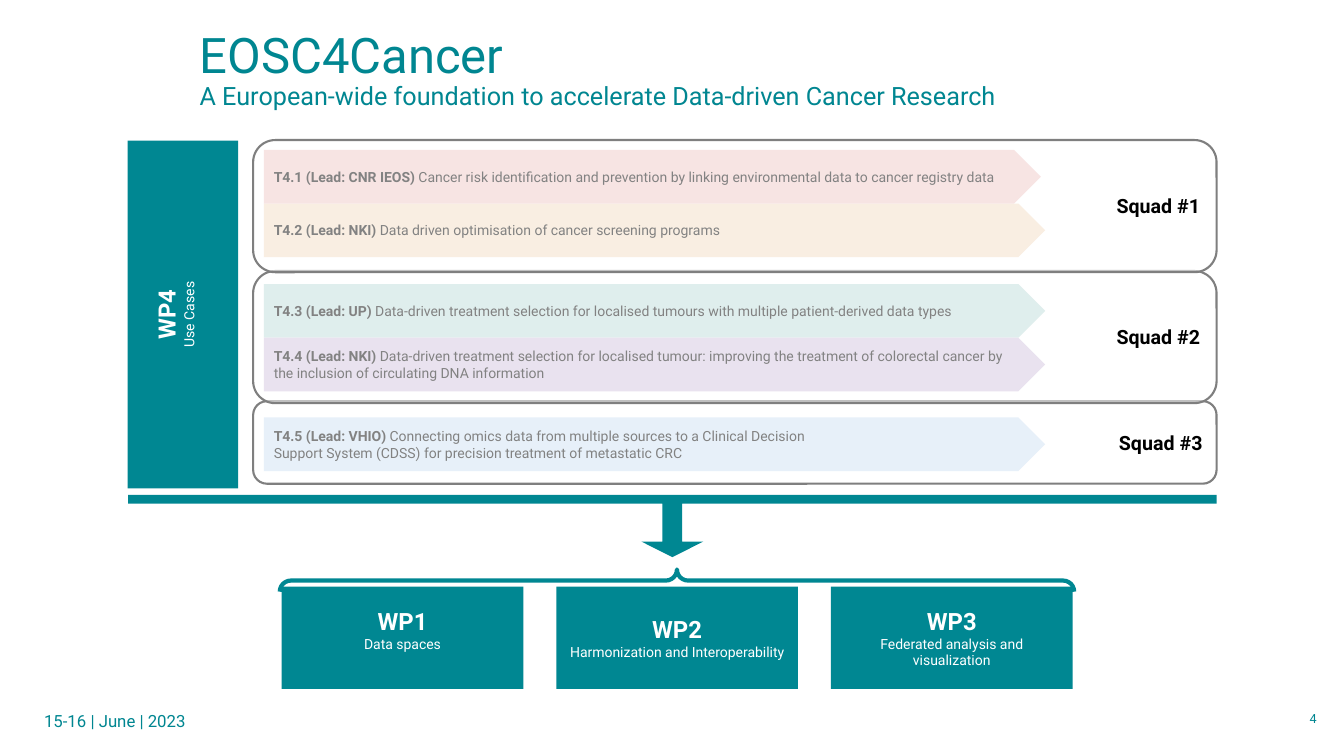
from lxml.etree import SubElement
from pptx import Presentation
from pptx.dml.color import RGBColor
from pptx.enum.shapes import MSO_SHAPE
from pptx.enum.text import MSO_ANCHOR, PP_ALIGN
from pptx.oxml.ns import qn
from pptx.util import Cm, Pt

FONT = "Roboto"
COLORS = {
    "heading": "008691", "teal": "008792", "white": "FFFFFF",
    "black": "000000", "border": "7F7F7F", "rose": "F0C8C6",
    "sand": "F3DDC4", "mint": "BFDDDB", "lilac": "D3C5DF", "sky": "CFE2F3",
}
TASK_HEIGHT = 1.35
TASKS = [
    (10.52, 19.69, "sky", "T4.5 (Lead: VHIO)",
     [" Connecting omics data from multiple sources to a Clinical Decision",
      "Support System (CDSS) for precision treatment of metastatic CRC"]),
    (7.16, 19.69, "mint", "T4.3 (Lead: UP)",
     [" Data-driven treatment selection for localised tumours with multiple "
      "patient-derived data types"]),
    (7.16 + TASK_HEIGHT, 19.69, "lilac", "T4.4 (Lead: NKI)",
     [" Data-driven treatment selection for localised tumour: improving the "
      "treatment of colorectal cancer by the inclusion of circulating DNA "
      "information"]),
    (3.78 + TASK_HEIGHT, 19.69, "sand", "T4.2 (Lead: NKI)",
     [" Data driven optimisation of cancer screening programs"]),
    (3.78, 19.58, "rose", "T4.1 (Lead: CNR IEOS)",
     [" Cancer risk identification and prevention by linking environmental "
      "data to cancer registry data"]),
]
SQUADS = [("Squad #3", 10.11, 2.08), ("Squad #2", 6.83, 3.33),
          ("Squad #1", 3.53, 3.33)]
PACKAGES = [("WP1", "Data spaces", 0.67),
            ("WP2", "Harmonization and Interoperability", 0.25),
            ("WP3", "Federated analysis and visualization", 0.25)]


def rgb(name):
    return RGBColor.from_string(COLORS[name])


def style(run, size, color, bold=False):
    run.font.name = FONT
    run.font.size = Pt(size)
    run.font.bold = bold
    run.font.color.rgb = rgb(color)


def set_frame(frame, vertical, bottom=None):
    frame.word_wrap = True
    frame.vertical_anchor = MSO_ANCHOR.MIDDLE
    frame.margin_left = frame.margin_right = Cm(0.25)
    frame.margin_top = Cm(vertical)
    frame.margin_bottom = Cm(vertical if bottom is None else bottom)


def write_lines(frame, lines, align, spacing=None):
    frame.text = "\n".join(text for text, *_ in lines)
    for paragraph, (_, *look) in zip(frame.paragraphs, lines):
        paragraph.alignment = align
        paragraph.line_spacing = spacing
        style(paragraph.runs[0], *look)


def add_label(slide, box, lines, align=PP_ALIGN.LEFT, spacing=None):
    frame = slide.shapes.add_textbox(*map(Cm, box)).text_frame
    set_frame(frame, 0.13)
    write_lines(frame, lines, align, spacing)


def add_block(slide, preset, box, fill=None, adjustments=()):
    block = slide.shapes.add_shape(preset, *map(Cm, box))
    block.shadow.inherit = False
    for index, value in enumerate(adjustments):
        block.adjustments[index] = value
    if fill:
        block.fill.solid()
        block.fill.fore_color.rgb = rgb(fill)
    else:
        block.fill.background()
    block.line.fill.background()
    return block


def add_outline(block, color, width):
    block.line.color.rgb = rgb(color)
    block.line.width = Pt(width)


def add_task(slide, top, width, fill, lead, details):
    task = add_block(slide, MSO_SHAPE.PENTAGON,
                     (6.65, top, width, TASK_HEIGHT), fill, [0.5])
    frame = task.text_frame
    set_frame(frame, 0.25)
    lines = [(lead, 10, "black", True)]
    lines += [(detail, 10, "black") for detail in details[1:]]
    write_lines(frame, lines, PP_ALIGN.LEFT)
    description = frame.paragraphs[0].add_run()
    description.text = details[0]
    style(description, 10, "black")


def add_squad(slide, name, top, height):
    squad = add_block(slide, MSO_SHAPE.ROUNDED_RECTANGLE,
                      (6.38, top, 24.28, height), "white", [0.167])
    add_outline(squad, "border", 1.5)
    veil = squad.fill._xPr.find(qn("a:solidFill"))[0]
    SubElement(veil, qn("a:alpha")).set("val", "51000")
    set_frame(squad.text_frame, 0.25)
    write_lines(squad.text_frame, [(name, 14, "black", True)], PP_ALIGN.RIGHT)


def add_package(slide, box, code, topic, bottom, rotation=0):
    package = add_block(slide, MSO_SHAPE.RECTANGLE, box, "teal")
    package.rotation = rotation
    set_frame(package.text_frame, 0.25, bottom)
    write_lines(package.text_frame,
                [(code, 17, "white", True), (topic, 10, "white")],
                PP_ALIGN.CENTER)


def main():
    deck = Presentation()
    deck.slide_width, deck.slide_height = Cm(33.87), Cm(19.05)
    slide = deck.slides.add_slide(deck.slide_layouts[6])

    add_label(slide, (4.78, 0.03, 27.31, 3.53), [
        ("EOSC4Cancer", 35, "heading"),
        ("A European-wide foundation to accelerate Data-driven Cancer Research",
         18, "heading")], spacing=0.9)
    add_label(slide, (29.85, 17.83, 3.58, 0.56), [("4", 9, "heading")],
              PP_ALIGN.RIGHT)
    add_label(slide, (0.86, 17.65, 11.43, 1.02),
              [("15-16 | June | 2023", 12, "heading")])

    for task in TASKS:
        add_task(slide, *task)
    for squad in SQUADS:
        add_squad(slide, *squad)
    for column, package in enumerate(PACKAGES):
        add_package(slide, (7.1 + column * 6.92, 14.78, 6.09, 2.58), *package)

    brace = add_block(slide, MSO_SHAPE.LEFT_BRACE, (16.78, 4.62, 0.56, 20.02),
                      adjustments=[0.5, 0.5])
    brace.rotation = 90
    add_outline(brace, "teal", 3)
    add_block(slide, MSO_SHAPE.DOWN_ARROW_CALLOUT, (3.23, 12.47, 27.43, 1.57),
              "teal", [0.318, 0.497, 0.25, 0.143])
    add_package(slide, (0.23, 6.53, 8.76, 2.79), "WP4", "Use Cases", 0.67, 270)

    deck.save("out.pptx")


if __name__ == "__main__":
    main()
